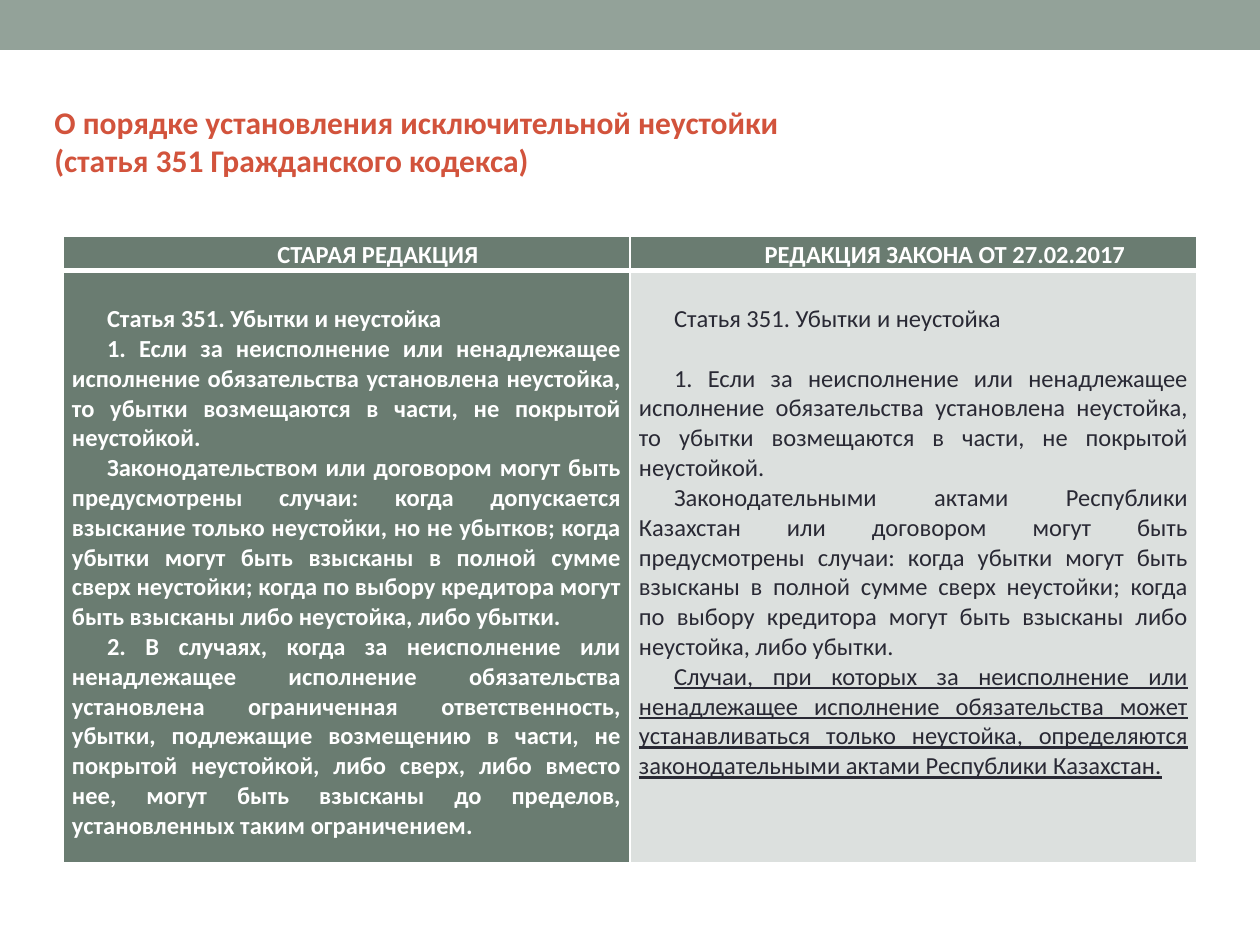
from dataclasses import dataclass

from lxml.etree import SubElement
from pptx import Presentation
from pptx.dml.color import RGBColor
from pptx.enum.shapes import MSO_SHAPE as Shape
from pptx.enum.text import MSO_ANCHOR as Anchor, PP_ALIGN as Align
from pptx.oxml.ns import qn
from pptx.util import Pt

PX_PER_INCH = 126
EMU_PER_PX = 914400 / PX_PER_INCH

FONT = "Calibri"
WHITE, INK, ACCENT = "FFFFFF", "292934", "D2533C"
BAND, DARK, LIGHT = "93A299", "6A7C71", "DCE0DE"


@dataclass
class Paragraph:
    text: str
    underline: bool = False
    space_before: int = 0


@dataclass
class Column:
    heading: str
    body: list[Paragraph]
    fill: str
    color: str
    bold: bool


def px(length: int) -> int:
    return round(length * EMU_PER_PX)


def rgb(color: str) -> RGBColor:
    return RGBColor.from_string(color)


def add_text(paragraph, text: str, size: int, color: str, bold: bool, underline: bool = False) -> None:
    run = paragraph.add_run()
    run.text = text
    font = run.font
    font.name, font.size, font.bold, font.underline = FONT, Pt(size), bold, underline
    font.color.rgb = rgb(color)


def add_block(slide, left: int, top: int, width: int, height: int, fill: str):
    block = slide.shapes.add_shape(Shape.RECTANGLE, px(left), px(top), px(width), px(height))
    block.shadow.inherit = False
    block.fill.solid()
    block.fill.fore_color.rgb = rgb(fill)
    block.line.fill.background()
    return block


def set_indent(paragraph, left: int, first_line: int) -> None:
    properties = paragraph._p.get_or_add_pPr()
    properties.set("marL", str(px(left)))
    properties.set("indent", str(px(first_line)))


def style_cell(cell, fill: str, margin_top: int, top_line: int, bottom_line: int) -> None:
    cell.margin_left = cell.margin_right = px(9)
    cell.margin_top, cell.margin_bottom = px(margin_top), 0
    properties = cell._tc.get_or_add_tcPr()
    # Borders come before the fill in the cell properties
    for side, width in (("L", 1), ("R", 1), ("T", top_line), ("B", bottom_line)):
        border = SubElement(properties, qn(f"a:ln{side}"), w=str(Pt(width)))
        SubElement(SubElement(border, qn("a:solidFill")), qn("a:srgbClr"), val=WHITE)
    cell.fill.solid()
    cell.fill.fore_color.rgb = rgb(fill)


def fill_column(header, body, column: Column) -> None:
    style_cell(header, DARK, 0, 1, 3)
    heading = header.text_frame.paragraphs[0]
    heading.alignment, heading.line_spacing = Align.CENTER, 1.15
    set_indent(heading, 63, 0)
    add_text(heading, column.heading, 14, WHITE, True)

    style_cell(body, column.fill, 34, 3, 1)
    frame = body.text_frame
    for index, item in enumerate(column.body):
        paragraph = frame.add_paragraph() if index else frame.paragraphs[0]
        paragraph.alignment = Align.JUSTIFY
        paragraph.space_before = Pt(item.space_before)
        set_indent(paragraph, 0, 35)
        add_text(paragraph, item.text, 14, column.color, column.bold, item.underline)


ARTICLE = "Статья 351. Убытки и неустойка"
RULE = (
    "1. Если за неисполнение или ненадлежащее исполнение обязательства "
    "установлена неустойка, то убытки возмещаются в части, не покрытой неустойкой."
)
CASES = (
    "когда убытки могут быть взысканы в полной сумме сверх неустойки; "
    "когда по выбору кредитора могут быть взысканы либо неустойка, либо убытки."
)
TITLE = (
    "О порядке установления исключительной неустойки",
    "(статья 351 Гражданского кодекса)",
)
COLUMNS = [
    Column("СТАРАЯ РЕДАКЦИЯ", [
        Paragraph(ARTICLE),
        Paragraph(RULE),
        Paragraph("Законодательством или договором могут быть предусмотрены случаи: "
                  "когда допускается взыскание только неустойки, но не убытков; " + CASES),
        Paragraph("2. В случаях, когда за неисполнение или ненадлежащее исполнение "
                  "обязательства установлена ограниченная ответственность, убытки, "
                  "подлежащие возмещению в части, не покрытой неустойкой, либо сверх, "
                  "либо вместо нее, могут быть взысканы до пределов, установленных "
                  "таким ограничением."),
    ], DARK, WHITE, True),
    Column("РЕДАКЦИЯ ЗАКОНА ОТ 27.02.2017", [
        Paragraph(ARTICLE),
        Paragraph(RULE, space_before=17),
        Paragraph("Законодательными актами Республики Казахстан или договором "
                  "могут быть предусмотрены случаи: " + CASES),
        Paragraph("Случаи, при которых за неисполнение или ненадлежащее исполнение "
                  "обязательства может устанавливаться только неустойка, определяются "
                  "законодательными актами Республики Казахстан.", underline=True),
    ], LIGHT, INK, False),
]


def main() -> None:
    deck = Presentation()
    deck.slide_width, deck.slide_height = px(1260), px(945)
    slide = deck.slides.add_slide(deck.slide_layouts[6])

    # Top band
    add_block(slide, 0, 0, 1260, 50, BAND)

    # Title
    title = add_block(slide, 42, 97, 1201, 165, WHITE).text_frame
    title.word_wrap, title.vertical_anchor = True, Anchor.TOP
    for index, line in enumerate(TITLE):
        paragraph = title.add_paragraph() if index else title.paragraphs[0]
        paragraph.alignment = Align.LEFT
        add_text(paragraph, line, 18, ACCENT, True)

    # Comparison table
    row_heights = (34, 592)
    table = slide.shapes.add_table(
        len(row_heights), len(COLUMNS), px(63), px(236), px(1134), px(sum(row_heights))
    ).table
    for row, height in zip(table.rows, row_heights):
        row.height = px(height)
    for index, column in enumerate(COLUMNS):
        fill_column(table.cell(0, index), table.cell(1, index), column)

    deck.save("out.pptx")


if __name__ == "__main__":
    main()
